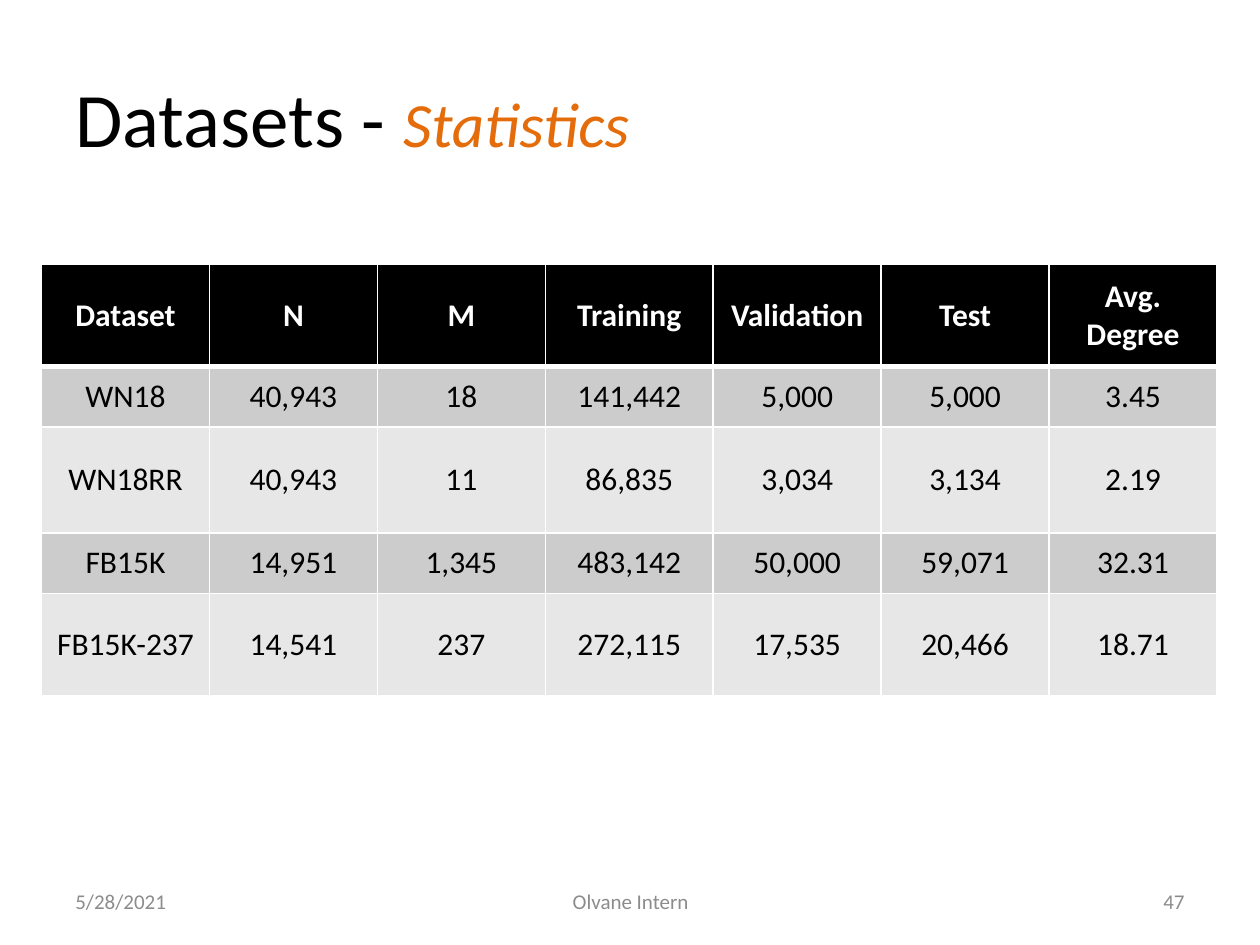
from lxml import etree
from pptx import Presentation
from pptx.dml.color import RGBColor
from pptx.enum.text import MSO_ANCHOR, PP_ALIGN
from pptx.oxml.ns import qn
from pptx.util import Inches, Pt

LEFT, CENTER, RIGHT = PP_ALIGN.LEFT, PP_ALIGN.CENTER, PP_ALIGN.RIGHT
MIDDLE = MSO_ANCHOR.MIDDLE
BLACK, WHITE, ORANGE, GRAY = "000000", "FFFFFF", "E46C0A", "8C8C8C"
BAND_FILLS = ["CCCCCC", "E7E7E7"]


def add_run(paragraph, text, color, **font_values):
    run = paragraph.add_run()
    run.text = text
    run.font.color.rgb = RGBColor.from_string(color)
    for name, value in {"name": "Calibri", **font_values}.items():
        setattr(run.font, name, value)


def set_border(cell, side, width):
    """Draw a white line on one side of the cell: lnL, lnR, lnT or lnB."""
    line = etree.Element(qn(f"a:{side}"), w=str(Pt(width)))
    fill = etree.SubElement(line, qn("a:solidFill"))
    etree.SubElement(fill, qn("a:srgbClr"), val=WHITE)
    cell._tc.get_or_add_tcPr().append(line)


presentation = Presentation()
presentation.slide_width, presentation.slide_height = Inches(10), Inches(7.5)
slide = presentation.slides.add_slide(presentation.slide_layouts[6])

# Title and footer: left, top, width, height, alignment, runs
text_boxes = [
    (0.5, 0.3, 9, 1.25, LEFT, [
        ("Datasets - ", BLACK, {"size": Pt(44)}),
        ("Statistics", ORANGE, {"size": Pt(36), "italic": True}),
    ]),
    (0.5, 6.95, 2.33, 0.4, LEFT, [("5/28/2021", GRAY, {"size": Pt(12)})]),
    (3.42, 6.95, 3.17, 0.4, CENTER, [("Olvane Intern", GRAY, {"size": Pt(12)})]),
    (7.17, 6.95, 2.33, 0.4, RIGHT, [("47", GRAY, {"size": Pt(12)})]),
]
for left, top, width, height, alignment, runs in text_boxes:
    text_box = slide.shapes.add_textbox(
        Inches(left), Inches(top), Inches(width), Inches(height))
    text_frame = text_box.text_frame
    text_frame.word_wrap = True
    text_frame.vertical_anchor = MIDDLE
    paragraph = text_frame.paragraphs[0]
    paragraph.alignment = alignment
    for text, color, font_values in runs:
        add_run(paragraph, text, color, **font_values)

# Statistics table
rows = [
    ["Dataset", "N", "M", "Training", "Validation", "Test", "Avg. Degree"],
    ["WN18", "40,943", "18", "141,442", "5,000", "5,000", "3.45"],
    ["WN18RR", "40,943", "11", "86,835", "3,034", "3,134", "2.19"],
    ["FB15K", "14,951", "1,345", "483,142", "50,000", "59,071", "32.31"],
    ["FB15K-237", "14,541", "237", "272,115", "17,535", "20,466", "18.71"],
]
row_heights = [0.81, 0.48, 0.84, 0.48, 0.81]
table = slide.shapes.add_table(
    len(rows), len(rows[0]), Inches(0.33), Inches(2.1),
    Inches(9.33), Inches(sum(row_heights))).table

for row_index, (values, height) in enumerate(zip(rows, row_heights)):
    table.rows[row_index].height = Inches(height)
    is_header = row_index == 0
    fill_color = BLACK if is_header else BAND_FILLS[(row_index - 1) % 2]
    border_widths = {
        "lnL": 1,
        "lnR": 1,
        "lnT": 3 if row_index == 1 else 1,
        "lnB": 3 if is_header else 1,
    }
    for column_index, value in enumerate(values):
        cell = table.cell(row_index, column_index)
        cell.vertical_anchor = MIDDLE
        for side, width in border_widths.items():
            set_border(cell, side, width)
        cell.fill.solid()
        cell.fill.fore_color.rgb = RGBColor.from_string(fill_color)
        paragraph = cell.text_frame.paragraphs[0]
        paragraph.alignment = CENTER
        add_run(paragraph, value, WHITE if is_header else BLACK,
                size=Pt(18), bold=is_header)

presentation.save("out.pptx")
